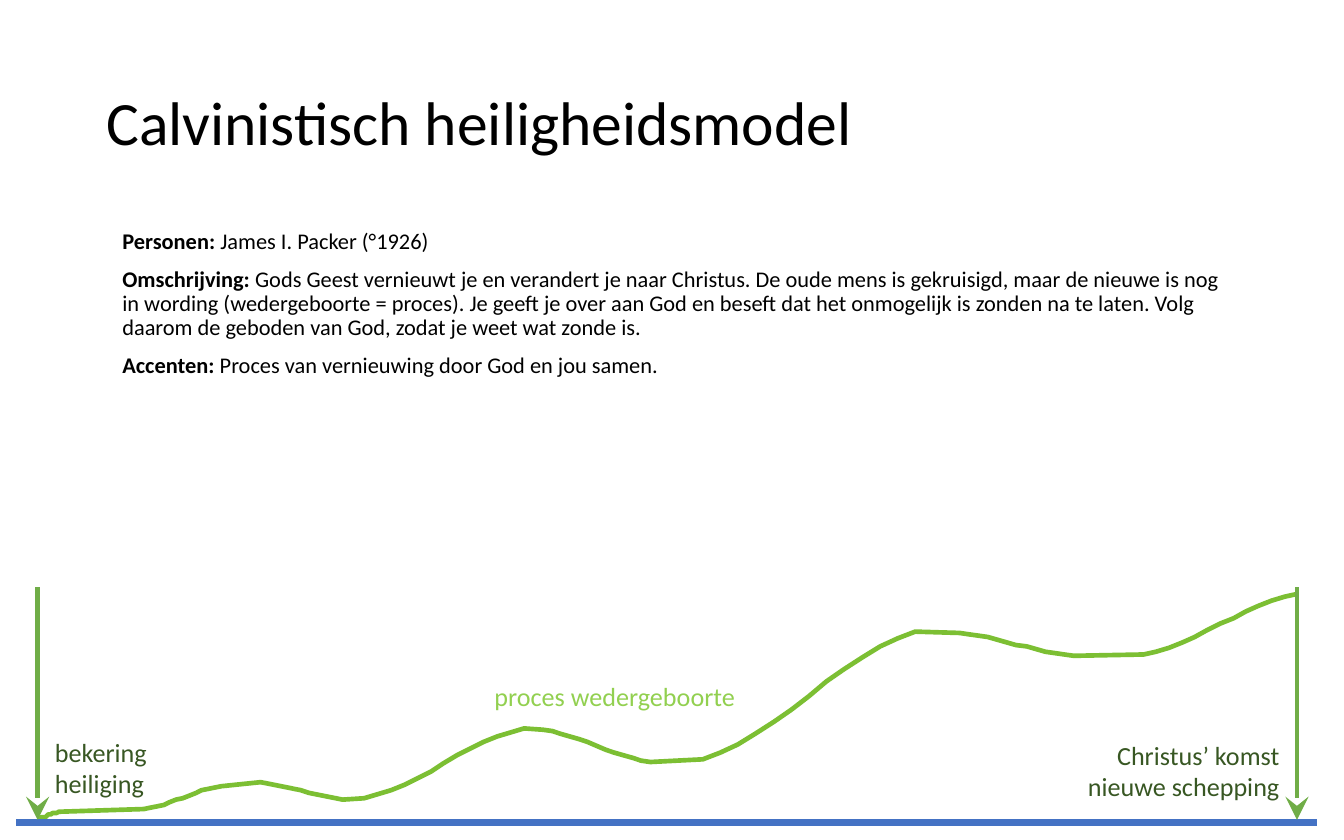
from math import cos, pi

from lxml import etree
from pptx import Presentation
from pptx.dml.color import RGBColor
from pptx.enum import shapes, text
from pptx.oxml.ns import qn
from pptx.util import Pt

PX = 9144  # 100 px to the inch
COLORS = {"ink": "000000", "curve": "7CBF33", "ground": "4472C4",
          "arrow": "70AD47", "moment": "385723", "process": "92D050"}


def add_run(paragraph, words, size, color, bold=False):
    run = paragraph.add_run()
    run.text = words
    run.font.name = "Calibri"
    run.font.size = Pt(size)
    run.font.bold = bold
    run.font.color.rgb = RGBColor.from_string(COLORS[color])


def add_line(x1, y1, x2, y2, color, width):
    connector = slide.shapes.add_connector(
        shapes.MSO_CONNECTOR.STRAIGHT, x1 * PX, y1 * PX, x2 * PX, y2 * PX)
    connector.line.color.rgb = RGBColor.from_string(COLORS[color])
    connector.line.width = Pt(width)
    etree.SubElement(connector._element.spPr, qn("a:effectLst"))
    return connector


prs = Presentation()
prs.slide_width, prs.slide_height = 1000 * PX, 625 * PX
slide = prs.slides.add_slide(prs.slide_layouts[1])

# Title
title = slide.shapes.title
title.left, title.top, title.width, title.height = [v * PX for v in (69, 33, 862, 121)]
title.text_frame.vertical_anchor = text.MSO_ANCHOR.MIDDLE
heading = title.text_frame.paragraphs[0]
heading.alignment = text.PP_ALIGN.LEFT
heading.line_spacing = 0.9
add_run(heading, "Calvinistisch heiligheidsmodel", 33, "ink")

# Description of the model
description = slide.placeholders[1]
description.left, description.top, description.width, description.height = [
    v * PX for v in (69, 166, 862, 397)]
frame = description.text_frame
frame.auto_size = text.MSO_AUTO_SIZE.NONE
topics = [
    ("Personen: ", "James I. Packer (°1926)"),
    ("Omschrijving:", " Gods Geest vernieuwt je en verandert je naar Christus. "
     "De oude mens is gekruisigd, maar de nieuwe is nog in wording "
     "(wedergeboorte = proces). Je geeft je over aan God en beseft dat het "
     "onmogelijk is zonden na te laten. Volg daarom de geboden van God, "
     "zodat je weet wat zonde is."),
    ("Accenten:", " Proces van vernieuwing door God en jou samen."),
]
for i, (label, explanation) in enumerate(topics):
    topic = frame.paragraphs[0] if i == 0 else frame.add_paragraph()
    topic.line_spacing = 0.9
    topic.space_before = Pt(7.5)
    props = topic._p.get_or_add_pPr()
    props.set("marL", str(12 * PX))
    props.set("indent", "0")
    etree.SubElement(props, qn("a:buNone"))
    add_run(topic, label, 12, "ink", bold=True)
    add_run(topic, explanation, 12, "ink")

# Time axis: the ground line, and an arrow at each of the two moments
ground_y = 612
conversion_x, coming_x = 28, 965
arrow_top, arrow_tip = 437, 610

# Rebirth curve: level stretches (from, to), joined by eased slopes
levels = [
    ((conversion_x, 609), (conversion_x, 609)),  # conversion
    ((45, 604), (107, 602)),                     # first steps
    ((165, 585), (194, 582)),                    # first crest
    ((255, 595), (271, 594)),                    # first dip
    ((390, 542), (404, 543)),                    # second crest
    ((484, 567), (523, 565)),                    # second dip
    ((681, 470), (714, 471)),                    # third crest
    ((799, 488), (851, 487)),                    # third dip
    ((coming_x, 442), (coming_x, 442)),          # coming of Christ
]
STEPS = 12
growth = [levels[0][0]]
for (_, (x1, y1)), ((x2, y2), level_end) in zip(levels, levels[1:]):
    for step in range(1, STEPS + 1):
        t = step / STEPS
        ease = (t + (1 - cos(pi * t)) / 2) / 2  # halfway between straight and S-shaped
        growth.append((x1 + (x2 - x1) * t, y1 + (y2 - y1) * ease))
    growth.append(level_end)

builder = slide.shapes.build_freeform(*growth[0], scale=PX)
builder.add_line_segments(growth[1:], close=False)
curve = builder.convert_to_shape()
curve.shadow.inherit = False
curve.fill.background()
curve.line.color.rgb = RGBColor.from_string(COLORS["curve"])
curve.line.width = Pt(2.5)

# Ground line and moment arrows
add_line(12, ground_y, 980, ground_y, "ground", 3.5)
for x in (conversion_x, coming_x):
    moment = add_line(x, arrow_top, x, arrow_tip, "arrow", 2.5)
    outline = moment._element.spPr.find(qn("a:ln"))
    etree.SubElement(outline, qn("a:tailEnd"), type="stealth", w="lg", len="lg")

# Labels
left, right = text.PP_ALIGN.LEFT, text.PP_ALIGN.RIGHT
labels = [
    ((31, 543, 193, 57), ["bekering", "heiliging"], left, "moment"),
    ((769, 545, 193, 57), ["Christus’ komst", "nieuwe schepping"], right, "moment"),
    ((358, 501, 228, 34), ["proces wedergeboorte"], left, "process"),
]
for box, lines, alignment, color in labels:
    caption = slide.shapes.add_textbox(*[v * PX for v in box]).text_frame
    caption.word_wrap = True
    caption.auto_size = text.MSO_AUTO_SIZE.SHAPE_TO_FIT_TEXT
    for i, words in enumerate(lines):
        line = caption.paragraphs[0] if i == 0 else caption.add_paragraph()
        line.alignment = alignment
        add_run(line, words, 14, color)

prs.save("out.pptx")
